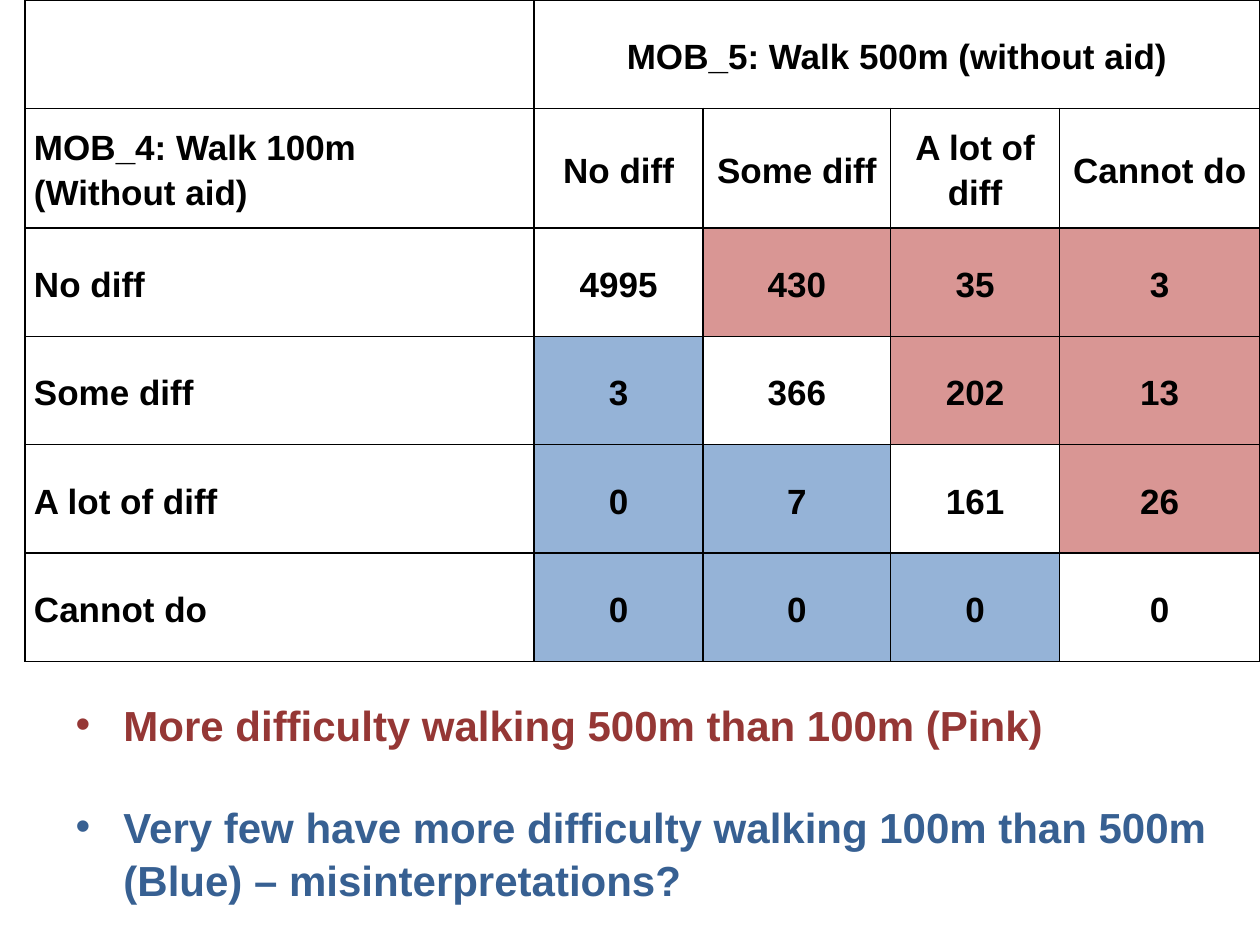
from dataclasses import dataclass
from lxml import etree
from pptx import Presentation
from pptx import util as u
from pptx.dml.color import RGBColor
from pptx.enum import text
from pptx.oxml import ns

TOP_HEADING = "MOB_5: Walk 500m (without aid)"
SIDE_HEADING = "MOB_4: Walk 100m\n(Without aid)"
LEVELS = ["No diff", "Some diff", "A lot of diff", "Cannot do"]
COUNTS = [
    [4995, 430, 35, 3],
    [3, 366, 202, 13],
    [0, 7, 161, 26],
    [0, 0, 0, 0],
]
COLUMN_WIDTHS = [4.04, 1.34, 1.49, 1.34, 1.59]
ROW_HEIGHTS = [0.86, 0.95] + [0.86] * len(LEVELS)


@dataclass(frozen=True)
class Theme:
    font: str = "Arial"
    table_size: int = 20
    finding_size: int = 24
    black: str = "000000"
    white: str = "FFFFFF"
    pink: str = "D99694"
    blue: str = "95B3D7"
    dark_pink: str = "953735"
    dark_blue: str = "376092"


THEME = Theme()
FINDINGS = [
    ("More difficulty walking 500m than 100m (Pink)", THEME.dark_pink),
    ("Very few have more difficulty walking 100m than 500m (Blue) – misinterpretations?", THEME.dark_blue),
]


def format_runs(paragraph, size, color):
    for run in paragraph.runs:
        run.font.name = THEME.font
        run.font.size = u.Pt(size)
        run.font.bold = True
        run.font.color.rgb = RGBColor.from_string(color)


def add_borders(cell):
    properties = cell._tc.get_or_add_tcPr()
    for side in ("a:lnL", "a:lnR", "a:lnT", "a:lnB"):
        line = etree.SubElement(properties, ns.qn(side), w=str(u.Pt(1)))
        fill = etree.SubElement(line, ns.qn("a:solidFill"))
        etree.SubElement(fill, ns.qn("a:srgbClr"), val=THEME.black)


def format_cell(cell, words, color, centred):
    add_borders(cell)
    cell.fill.solid()
    cell.fill.fore_color.rgb = RGBColor.from_string(color)
    cell.margin_left = cell.margin_right = u.Inches(0.07)
    cell.margin_top = cell.margin_bottom = 0
    cell.vertical_anchor = text.MSO_ANCHOR.MIDDLE
    cell.text_frame.text = words
    for paragraph in cell.text_frame.paragraphs:
        paragraph.alignment = text.PP_ALIGN.CENTER if centred else text.PP_ALIGN.LEFT
        paragraph.line_spacing = 1.15
        format_runs(paragraph, THEME.table_size, THEME.black)


def count_color(row, column):
    if column > row:
        return THEME.pink
    return THEME.blue if column < row else THEME.white


def add_crosstab(slide):
    rows = [["", TOP_HEADING, "", "", ""], [SIDE_HEADING] + LEVELS]
    rows += [[level] + [str(count) for count in counts] for level, counts in zip(LEVELS, COUNTS)]
    table = slide.shapes.add_table(
        len(rows), len(COLUMN_WIDTHS), u.Inches(0.2), 0,
        u.Inches(sum(COLUMN_WIDTHS)), u.Inches(sum(ROW_HEIGHTS)),
    ).table
    table.first_row = table.horz_banding = False
    for column, width in zip(table.columns, COLUMN_WIDTHS):
        column.width = u.Inches(width)
    for row, height in zip(table.rows, ROW_HEIGHTS):
        row.height = u.Inches(height)
    for r, row in enumerate(rows):
        for c, words in enumerate(row):
            color = count_color(r - 2, c - 1) if r >= 2 and c >= 1 else THEME.white
            format_cell(table.cell(r, c), words, color, c > 0)
    table.cell(0, 1).merge(table.cell(0, len(COLUMN_WIDTHS) - 1))


def fill_findings(body):
    body.left, body.top = u.Inches(0.5), u.Inches(5.48)
    body.width, body.height = u.Inches(9.22), u.Inches(1.65)
    frame = body.text_frame
    frame.auto_size = text.MSO_AUTO_SIZE.NONE
    frame.text = "\n".join(words for words, _ in FINDINGS)
    for index, (paragraph, (_, color)) in enumerate(zip(frame.paragraphs, FINDINGS)):
        paragraph.line_spacing = 1.05
        paragraph.space_before = u.Pt(28 * index)
        properties = paragraph._p.get_or_add_pPr()
        properties.set("marL", str(u.Inches(0.38)))
        properties.set("indent", str(-u.Inches(0.38)))
        etree.SubElement(properties, ns.qn("a:buFont"), typeface=THEME.font)
        etree.SubElement(properties, ns.qn("a:buChar"), char="•")
        format_runs(paragraph, THEME.finding_size, color)


def main():
    presentation = Presentation()
    presentation.slide_width, presentation.slide_height = u.Inches(10), u.Inches(7.5)
    slide = presentation.slides.add_slide(presentation.slide_layouts.get_by_name("Title and Content"))
    title = slide.shapes.title.element
    title.getparent().remove(title)
    add_crosstab(slide)
    fill_findings(slide.placeholders[1])
    presentation.save("out.pptx")


if __name__ == "__main__":
    main()
